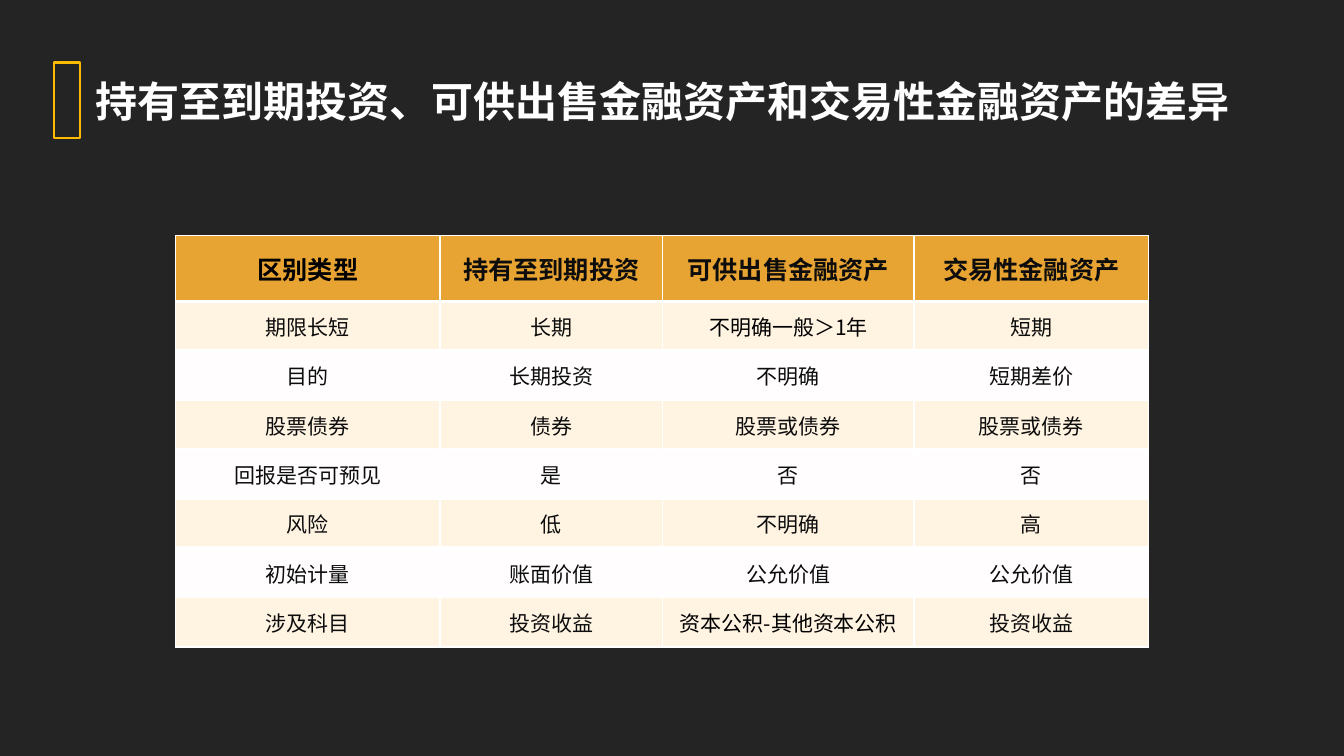
"""Build a slide that compares three classes of financial assets in a table."""
from dataclasses import dataclass

import lxml.etree
import pptx
import pptx.dml.color
import pptx.enum.shapes
import pptx.enum.text
import pptx.oxml.ns
import pptx.util

PX = 9144
FONT = "Noto Sans CJK SC"
COLORS = {
    "background": "242424",
    "accent": "FFBA02",
    "header": "E8A432",
    "cream": "FFF3E2",
    "pale": "FFFDFE",
    "white": "FFFFFF",
    "ink": "0D0D0D",
    "black": "000000",
}
TITLE = "持有至到期投资、可供出售金融资产和交易性金融资产的差异"
COLUMN_WIDTHS = [524, 442, 499, 465]
HEADER_HEIGHT, ROW_HEIGHT = 130, 98
ROWS = [
    ["区别类型", "持有至到期投资", "可供出售金融资产", "交易性金融资产"],
    ["期限长短", "长期", "不明确一般＞1年", "短期"],
    ["目的", "长期投资", "不明确", "短期差价"],
    ["股票债券", "债券", "股票或债券", "股票或债券"],
    ["回报是否可预见", "是", "否", "否"],
    ["风险", "低", "不明确", "高"],
    ["初始计量", "账面价值", "公允价值", "公允价值"],
    ["涉及科目", "投资收益", "资本公积-其他资本公积", "投资收益"],
]
BLACK_CELLS = {(0, 0), (1, 2), (7, 2)}


@dataclass(frozen=True)
class Area:
    left: int
    top: int
    width: int
    height: int

    def emu(self) -> list[int]:
        return [n * PX for n in (self.left, self.top, self.width, self.height)]


@dataclass(frozen=True)
class TextStyle:
    size: int
    color: str
    bold: bool


def rgb(name: str) -> pptx.dml.color.RGBColor:
    return pptx.dml.color.RGBColor.from_string(COLORS[name])


def paint(fill, color: str) -> None:
    fill.solid()
    fill.fore_color.rgb = rgb(color)


def write(frame, text: str, style: TextStyle, inset: int) -> None:
    para = frame.paragraphs[0]
    para.alignment = pptx.enum.text.PP_ALIGN.CENTER
    span = para.add_run()
    span.text = text
    span.font.size = pptx.util.Pt(style.size)
    span.font.bold = style.bold
    span.font.color.rgb = rgb(style.color)
    span.font.name = FONT
    east_asian = lxml.etree.SubElement(span._r.get_or_add_rPr(), pptx.oxml.ns.qn("a:ea"))
    east_asian.set("typeface", FONT)
    for side in ("left", "top", "right", "bottom"):
        owner = frame if hasattr(frame, "margin_left") else frame._parent
        setattr(owner, f"margin_{side}", inset * PX)


def add_border(cell, side: str, points: int) -> None:
    line = lxml.etree.SubElement(cell._tc.get_or_add_tcPr(), pptx.oxml.ns.qn(f"a:ln{side}"))
    line.set("w", str(pptx.util.Pt(points)))
    fill = lxml.etree.SubElement(line, pptx.oxml.ns.qn("a:solidFill"))
    lxml.etree.SubElement(fill, pptx.oxml.ns.qn("a:srgbClr")).set("val", COLORS["white"])


def rule_width(row: int) -> int:
    """Return the width of the rule under a row, in points."""
    return 6 if row == 0 or (row % 2 and 0 < row < len(ROWS) - 1) else 2


def add_title(slide) -> None:
    title = slide.shapes.title
    title.left, title.top, title.width, title.height = Area(181, 133, 2267, 132).emu()
    paint(title.fill, "background")
    frame = title.text_frame
    frame.word_wrap = False
    frame.auto_size = pptx.enum.text.MSO_AUTO_SIZE.SHAPE_TO_FIT_TEXT
    frame.vertical_anchor = pptx.enum.text.MSO_ANCHOR.MIDDLE
    write(frame, TITLE, TextStyle(60, "white", True), 8)


def add_marker(slide) -> None:
    marker = slide.shapes.add_shape(
        pptx.enum.shapes.MSO_SHAPE.RECTANGLE, *Area(108, 124, 51, 150).emu()
    )
    marker.shadow.inherit = False
    marker.fill.background()
    marker.line.color.rgb = rgb("accent")
    marker.line.width = pptx.util.Pt(3)


def add_cell(cell, row: int, column: int) -> None:
    color = "black" if (row, column) in BLACK_CELLS else "ink"
    style = TextStyle(30 if row else 36, color, row == 0)
    write(cell.text_frame, ROWS[row][column], style, 5)
    for side in ("left", "top", "right", "bottom"):
        setattr(cell, f"margin_{side}", 5 * PX)
    cell.vertical_anchor = pptx.enum.text.MSO_ANCHOR.MIDDLE
    borders = {"L": 2, "R": 2, "T": rule_width(row - 1), "B": rule_width(row)}
    for side, points in borders.items():
        add_border(cell, side, points)
    paint(cell.fill, "header" if row == 0 else "cream" if row % 2 else "pale")


def add_comparison(slide) -> None:
    height = HEADER_HEIGHT + ROW_HEIGHT * (len(ROWS) - 1)
    area = Area(349, 468, sum(COLUMN_WIDTHS), height)
    table = slide.shapes.add_table(len(ROWS), len(COLUMN_WIDTHS), *area.emu()).table
    for column, width in zip(table.columns, COLUMN_WIDTHS):
        column.width = width * PX
    for row, line in enumerate(table.rows):
        line.height = (ROW_HEIGHT if row else HEADER_HEIGHT) * PX
        for column, cell in enumerate(line.cells):
            add_cell(cell, row, column)


def main() -> None:
    deck = pptx.Presentation()
    deck.slide_width, deck.slide_height = 2667 * PX, 1500 * PX
    page = deck.slides.add_slide(deck.slide_layouts[5])
    paint(page.background.fill, "background")
    add_marker(page)
    add_title(page)
    add_comparison(page)
    deck.save("out.pptx")


if __name__ == "__main__":
    main()
